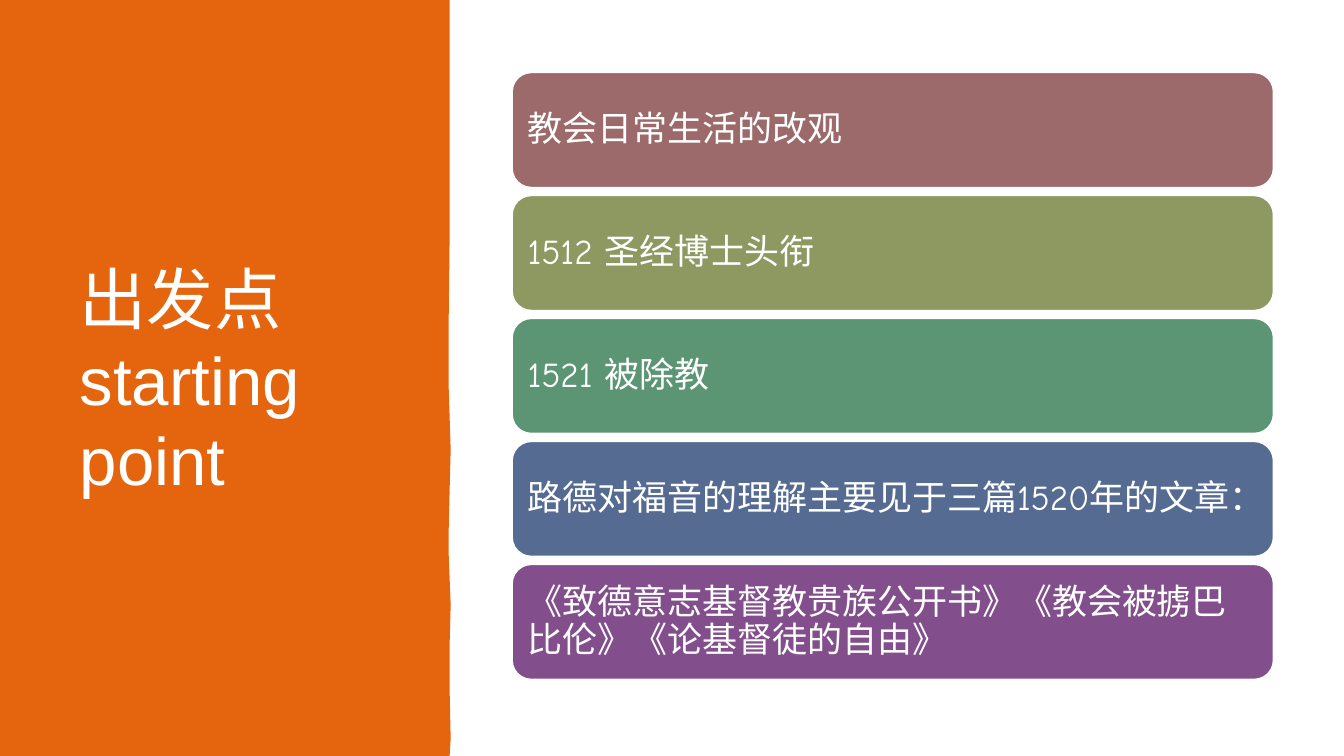
from dataclasses import dataclass

from pptx import Presentation
from pptx.dml.color import RGBColor
from pptx.enum.shapes import MSO_SHAPE
from pptx.enum.text import MSO_ANCHOR, MSO_AUTO_SIZE, PP_ALIGN
from pptx.util import Inches, Pt

RECTANGLE, ROUNDED = MSO_SHAPE.RECTANGLE, MSO_SHAPE.ROUNDED_RECTANGLE
MIDDLE, LEFT, NO_FIT = MSO_ANCHOR.MIDDLE, PP_ALIGN.LEFT, MSO_AUTO_SIZE.NONE


@dataclass(frozen=True)
class Theme:
    white: RGBColor = RGBColor.from_string("FFFFFF")
    orange: RGBColor = RGBColor.from_string("E4650E")
    title_font: str = "Arial"
    title_size: int = 48
    card_font: str = "Comic Neue"
    card_size: int = 25


THEME = Theme()
SLIDE_WIDTH, SLIDE_HEIGHT = 13.33, 7.5

# Right edge of the orange panel, as (x, y) from top to bottom
PANEL_EDGE = [
    (4.46, 0), (4.46, 0.63), (4.46, 1.02), (4.46, 1.41), (4.46, 1.74),
    (4.46, 2.33), (4.45, 3.22), (4.45, 3.83), (4.47, 4.46), (4.46, 4.86),
    (4.45, 5.28), (4.45, 5.49), (4.47, 6), (4.46, 6.39), (4.46, 6.85),
    (4.47, 7.33), (4.46, 7.5),
]

CARDS = [
    ("教会日常生活的改观", "9C6A6A"),
    ("1512 圣经博士头衔", "8E9962"),
    ("1521 被除教", "5B9574"),
    ("路德对福音的理解主要见于三篇1520年的文章：", "556B91"),
    ("《致德意志基督教贵族公开书》《教会被掳巴比伦》《论基督徒的自由》", "824F8C"),
]
CARD_LEFT, CARD_TOP, CARD_WIDTH, CARD_HEIGHT = 5.08, 0.72, 7.55, 1.14
CARD_PITCH = 1.22


def paint(shape, color):
    shape.shadow.inherit = False
    shape.fill.solid()
    shape.fill.fore_color.rgb = color
    shape.line.fill.background()


def write(shape, text, font, size, frame_format, para_format):
    frame = shape.text_frame
    for name, value in frame_format.items():
        setattr(frame, name, value)
    para = frame.paragraphs[0]
    for name, value in para_format.items():
        setattr(para, name, value)
    span = para.add_run()
    span.text = text
    for name, value in {"name": font, "size": Pt(size), "bold": False}.items():
        setattr(span.font, name, value)
    span.font.color.rgb = THEME.white


deck = Presentation()
deck.slide_width, deck.slide_height = Inches(SLIDE_WIDTH), Inches(SLIDE_HEIGHT)
page = deck.slides.add_slide(deck.slide_layouts[5])

# White backdrop
backdrop = page.shapes.add_shape(
    RECTANGLE, 0, 0, Inches(SLIDE_WIDTH), Inches(SLIDE_HEIGHT))
paint(backdrop, THEME.white)

# Orange panel with a wavy right edge
outline = page.shapes.build_freeform(0, 0, scale=1.0)
outline.add_line_segments(
    [(Inches(x), Inches(y)) for x, y in PANEL_EDGE + [(0, SLIDE_HEIGHT)]],
    close=True)
panel = outline.convert_to_shape()
paint(panel, THEME.orange)

# Title, stacked in front of the panel
title = page.shapes.title
panel.element.addnext(title.element)
title.left, title.top = Inches(0.69), Inches(0.7)
title.width, title.height = Inches(3.39), Inches(6.11)
frame_format = {"word_wrap": True, "auto_size": NO_FIT, "vertical_anchor": MIDDLE}
write(title, "出发点starting point", THEME.title_font, THEME.title_size,
      frame_format, {"alignment": LEFT})

# Five stacked cards
margins = {f"margin_{side}": Inches(0.1)
           for side in ("left", "top", "right", "bottom")}
for row, (text, color) in enumerate(CARDS):
    card = page.shapes.add_shape(
        ROUNDED, Inches(CARD_LEFT), Inches(CARD_TOP + row * CARD_PITCH),
        Inches(CARD_WIDTH), Inches(CARD_HEIGHT))
    paint(card, RGBColor.from_string(color))
    card.line.color.rgb = THEME.white
    card.line.width = Pt(1)
    write(card, text, THEME.card_font, THEME.card_size,
          frame_format | margins, {"alignment": LEFT, "line_spacing": 0.9})

deck.save("out.pptx")
